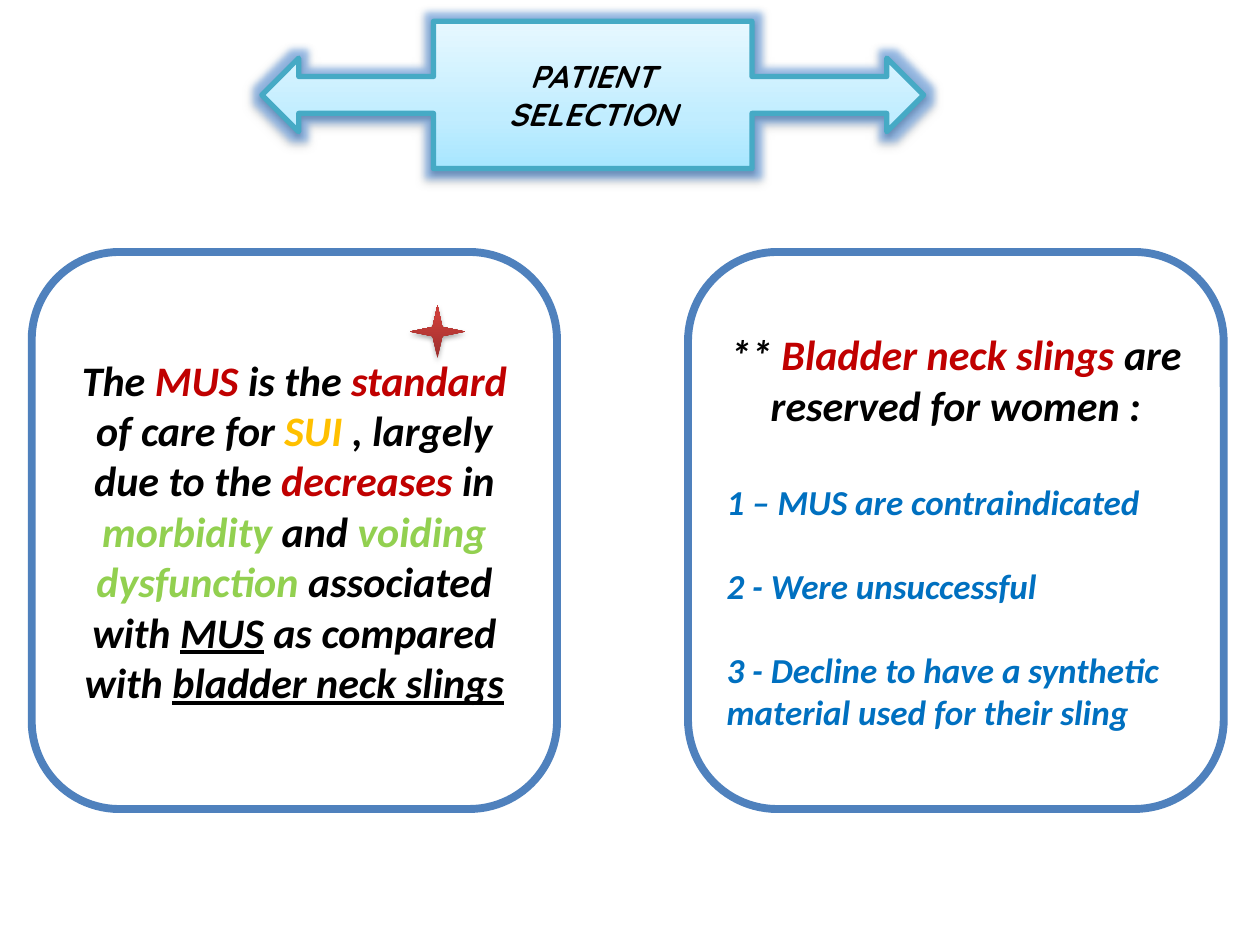
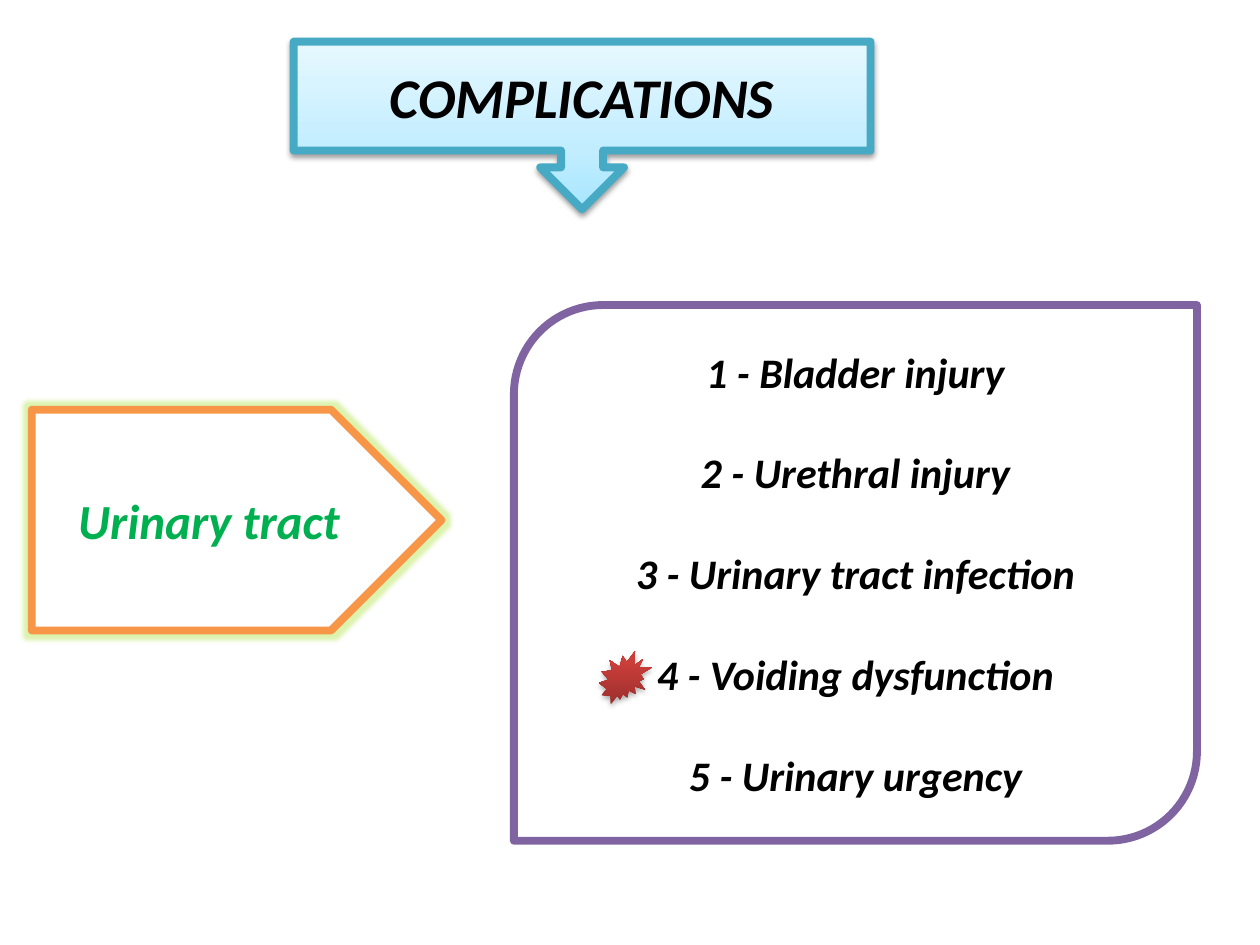
from lxml import etree
from pptx import Presentation
from pptx import util as u
from pptx.dml.color import RGBColor
from pptx.enum import shapes, text
from pptx.oxml import ns

BLACK = RGBColor(0x00, 0x00, 0x00)
WHITE = RGBColor(0xFF, 0xFF, 0xFF)
RED = RGBColor(0xC0, 0x00, 0x00)
AMBER = RGBColor(0xFF, 0xC0, 0x00)
LIME = RGBColor(0x92, 0xD0, 0x50)
GREEN = RGBColor(0x00, 0xB0, 0x50)
BLUE = RGBColor(0x00, 0x70, 0xC0)
PANEL_BLUE = RGBColor(0x4F, 0x81, 0xBD)
TEAL = RGBColor(0x46, 0xAA, 0xC5)
ORANGE = RGBColor(0xF7, 0x96, 0x46)
PURPLE = RGBColor(0x80, 0x64, 0xA2)
OLIVE = RGBColor(0x9B, 0xBB, 0x59)
SKY_STOPS = [(0, RGBColor(0xA7, 0xE6, 0xFF)), (35, RGBColor(0xC1, 0xED, 0xFF)),
             (100, RGBColor(0xE7, 0xF8, 0xFF))]
RUBY_STOPS = [(0, RGBColor(0x9C, 0x2F, 0x2D)), (80, RGBColor(0xCB, 0x3E, 0x3A)),
              (100, RGBColor(0xCE, 0x3B, 0x37))]

PRESET = shapes.MSO_SHAPE
CENTER, LEFT = text.PP_ALIGN.CENTER, text.PP_ALIGN.LEFT
BLANK_LAYOUT = 6
LINE_HEIGHT = 1.2
FRAME_WIDTH = 4.5


def add_xml(parent, tag, **attributes):
    values = {key: str(value) for key, value in attributes.items()}
    return etree.SubElement(parent, ns.qn(tag), values)


def add_colour(parent, colour, **changes):
    """Add a colour with its changes in percent, such as alpha."""
    node = add_xml(parent, "a:srgbClr", val=colour)
    for name, percent in changes.items():
        add_xml(node, f"a:{name}", val=percent * 1000)


def fill_rising(shape, stops):
    """Fill with a gradient that runs from bottom to top."""
    shape.fill.gradient()
    gradient = shape.element.spPr.find(ns.qn("a:gradFill"))
    for child in list(gradient):
        gradient.remove(child)
    stop_list = add_xml(gradient, "a:gsLst")
    for percent, colour in stops:
        add_colour(add_xml(stop_list, "a:gs", pos=percent * 1000), colour)
    add_xml(gradient, "a:lin", ang=270 * 60000, scaled=0)


def add_effects(shape, glow=None, shadow_alpha=None):
    effects = shape.element.spPr.find(ns.qn("a:effectLst"))
    if glow:
        colour, radius = glow
        halo = add_xml(effects, "a:glow", rad=int(u.Pt(radius)))
        add_colour(halo, colour, satMod=175, alpha=40)
    if shadow_alpha:
        shadow = add_xml(effects, "a:outerShdw", blurRad=int(u.Pt(3.1)),
                         dist=int(u.Pt(1.6)), dir=90 * 60000, rotWithShape=0)
        add_colour(shadow, BLACK, alpha=shadow_alpha)


def add_preset(slide, preset, box, line=None, width=FRAME_WIDTH):
    shape = slide.shapes.add_shape(preset, *(u.Cm(length) for length in box))
    shape.shadow.inherit = False
    if line is None:
        shape.line.fill.background()
    else:
        shape.line.color.rgb = line
        shape.line.width = u.Pt(width)
    return shape


def write(paragraph, runs, size, font="Calibri", align=CENTER, gap=0):
    """Write (words, colour[, underlined]) runs; gap is in lines above."""
    paragraph.alignment = align
    if gap:
        paragraph.space_before = u.Pt(gap)
    for words, colour, *underlined in runs:
        run = paragraph.add_run()
        run.text = words
        run.font.color.rgb = colour
        style = dict(name=font, size=u.Pt(size), bold=True, italic=True,
                     underline=bool(underlined) or None)
        for key, value in style.items():
            setattr(run.font, key, value)


def add_title(slide, preset, box, words, size, font="Calibri",
              width=FRAME_WIDTH, glow=None):
    title = add_preset(slide, preset, box, TEAL, width)
    fill_rising(title, SKY_STOPS)
    add_effects(title, glow, shadow_alpha=38)
    write(title.text_frame.paragraphs[0], [(words, BLACK)], size, font)


def add_panel(slide, preset, box, line, paragraphs, glow=None):
    """Add a white framed panel; each paragraph is a dict for write()."""
    panel = add_preset(slide, preset, box, line)
    panel.fill.solid()
    panel.fill.fore_color.rgb = WHITE
    add_effects(panel, glow)
    frame = panel.text_frame
    for index, content in enumerate(paragraphs):
        write(frame.add_paragraph() if index else frame.paragraphs[0], **content)


def add_marker(slide, preset, panel_box, offset, size):
    """Add a red marker at an offset from the corner of its panel."""
    left, top = (start + shift for start, shift in zip(panel_box, offset))
    marker = add_preset(slide, preset, (left, top, *size))
    fill_rising(marker, RUBY_STOPS)
    add_effects(marker, shadow_alpha=35)


def build_selection(slide):
    add_title(slide, PRESET.LEFT_RIGHT_ARROW_CALLOUT, (5.28, 0.43, 13.34, 2.97),
              "PATIENT SELECTION", 18, "Quicksand", 3, glow=(PANEL_BLUE, 8))
    standard = [
        ("The", BLACK), (" MUS ", RED), ("is the ", BLACK), ("standard", RED),
        (" of care for ", BLACK), ("SUI ", AMBER), (", largely due to the ", BLACK),
        ("decreases", RED), (" in ", BLACK), ("morbidity ", LIME), ("and ", BLACK),
        ("voiding dysfunction ", LIME), ("associated with ", BLACK),
        ("MUS", BLACK, True), (" as compared with ", BLACK),
        ("bladder neck slings", BLACK, True)]
    reserved = [("** ", BLACK), ("Bladder neck slings ", RED),
                ("are reserved for women :", BLACK)]
    reasons = ["1 – MUS are contraindicated", "2 - Were unsuccessful",
               "3 - Decline to have a synthetic material used for their sling"]
    standard_box = (0.64, 5.08, 10.59, 11.23)
    add_panel(slide, PRESET.ROUNDED_RECTANGLE, standard_box, PANEL_BLUE,
              [dict(runs=standard, size=24)])
    listed = [dict(runs=[(reason, BLUE)], size=20, align=LEFT,
                   gap=LINE_HEIGHT * (20 if index else 24))
              for index, reason in enumerate(reasons)]
    add_panel(slide, PRESET.ROUNDED_RECTANGLE, (13.87, 5.08, 10.8, 11.23),
              PANEL_BLUE, [dict(runs=reserved, size=24), *listed])
    add_marker(slide, PRESET.STAR_4_POINT, standard_box, (7.62, 1.07), (1.12, 1.07))


def build_complications(slide):
    add_title(slide, PRESET.DOWN_ARROW_CALLOUT, (5.92, 0.84, 11.63, 3.38),
              "COMPLICATIONS", 32)
    add_panel(slide, PRESET.PENTAGON, (0.64, 8.26, 8.26, 4.45), ORANGE,
              [dict(runs=[("Urinary tract", GREEN)], size=28)], glow=(OLIVE, 5))
    complications = ["Bladder injury", "Urethral injury", "Urinary tract infection",
                     "Voiding dysfunction", "Urinary urgency"]
    list_box = (10.36, 6.15, 13.77, 10.8)
    add_panel(slide, PRESET.ROUND_2_DIAG_RECTANGLE, list_box, PURPLE,
              [dict(runs=[(f"{number} - {name}", BLACK)], size=24,
                    gap=LINE_HEIGHT * 24 if number > 1 else 0)
               for number, name in enumerate(complications, 1)])
    add_marker(slide, PRESET.EXPLOSION2, list_box, (1.71, 6.98), (1.07, 1.07))


def main():
    deck = Presentation()
    deck.slide_width, deck.slide_height = u.Cm(25.4), u.Cm(19.05)
    for build in (build_selection, build_complications):
        build(deck.slides.add_slide(deck.slide_layouts[BLANK_LAYOUT]))
    deck.save("out.pptx")


if __name__ == "__main__":
    main()
